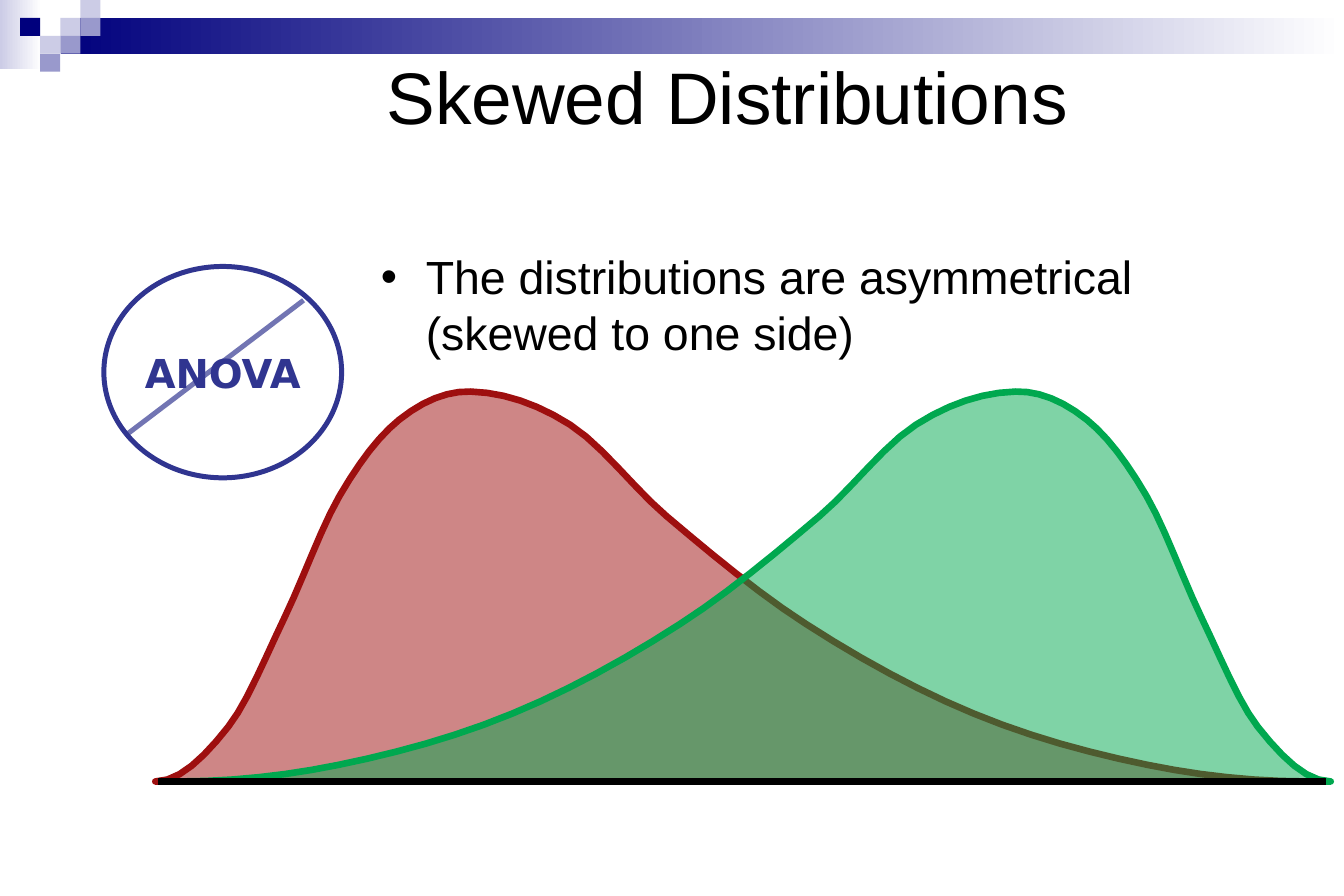
from dataclasses import dataclass

from pptx import Presentation
from pptx.dml.color import RGBColor
from pptx.enum.shapes import MSO_CONNECTOR as Connector, MSO_SHAPE as Shape
from pptx.enum.text import MSO_ANCHOR as Anchor, PP_ALIGN as Align
from pptx.oxml.ns import qn
from pptx.util import Pt
from lxml.etree import SubElement


@dataclass(frozen=True)
class Theme:
    navy: str = "00007D"
    lilac: str = "CCCCE6"
    mauve: str = "9999CC"
    white: str = "FFFFFF"
    black: str = "000000"
    red: str = "9E0F0F"
    green: str = "00A84F"
    badge: str = "303590"
    font: str = "Arial"
    badge_font: str = "DejaVu Sans"
    title_size: int = 44
    body_size: int = 28
    badge_size: int = 24


THEME = Theme()

MOSAIC = ["....L", ".N.LM", "..LM", "..M"]
MOSAIC_COLORS = {"N": THEME.navy, "L": THEME.lilac, "M": THEME.mauve}

SKEW_HEIGHTS = {
    0: 0, 44: 33, 78: 99, 111: 172, 147: 218, 190: 235,
    250: 215, 308: 160, 392: 95, 493: 41, 598: 10, 694: 0,
}
STEPS_PER_KNOT = 6


def apply(target, values):
    for name, value in values.items():
        setattr(target, name, value)


def rgb(color):
    return RGBColor.from_string(color)


def fade(parent, percent):
    SubElement(parent.find(".//" + qn("a:srgbClr")), qn("a:alpha"), val=str(percent * 1000))


def paint(shape, color):
    shape.shadow.inherit = False
    shape.fill.solid()
    shape.fill.fore_color.rgb = rgb(color)


def stroke(shape, color, width):
    shape.line.color.rgb = rgb(color)
    shape.line.width = Pt(width)


def add_line(slide, start, end, color, width):
    line = slide.shapes.add_connector(Connector.STRAIGHT, *map(Pt, start + end))
    stroke(line, color, width)
    SubElement(line.element.spPr, qn("a:effectLst"))
    return line


def write(shape, text, frame_format, paragraph_format, font_format, color):
    frame = shape.text_frame
    paragraph = frame.paragraphs[0]
    run = paragraph.add_run()
    run.text = text
    apply(frame, frame_format)
    apply(paragraph, paragraph_format)
    apply(run.font, font_format)
    run.font.color.rgb = rgb(color)
    return paragraph._p.get_or_add_pPr()


def space_before(properties):
    SubElement(SubElement(properties, qn("a:spcBef")), qn("a:spcPct"), val="20000")


def smooth_curve(knots, steps):
    inner_slopes = [(y2 - y0) / (x2 - x0) for (x0, y0), (x2, y2) in zip(knots, knots[2:])]
    slopes = [0, *inner_slopes, 0]
    points = []
    for (x0, y0), (x1, y1), slope0, slope1 in zip(knots, knots[1:], slopes, slopes[1:]):
        span = x1 - x0
        for step in range(steps):
            t = step / steps
            ease = t * t * (3 - 2 * t)
            bend = t * (1 - t) * span * ((1 - t) * slope0 - t * slope1)
            points.append((x0 + t * span, y0 + ease * (y1 - y0) + bend))
    return points + [knots[-1]]


def add_header(slide, left, top, width):
    column, row = 12.1, 10.8
    bar_left = 36.7
    bands = [
        (left, top, 25.2, 41.8, THEME.lilac),
        (left + bar_left, top + row, width - bar_left, 2 * row, THEME.navy),
    ]
    for *box, color in bands:
        band = slide.shapes.add_shape(Shape.RECTANGLE, *map(Pt, box))
        band.shadow.inherit = False
        band.line.fill.background()
        band.fill.gradient()
        band.fill.gradient_angle = 0
        for stop, shade in zip(band.fill.gradient_stops, (color, THEME.white)):
            stop.color.rgb = rgb(shade)

    for down, pattern in enumerate(MOSAIC):
        for across, key in enumerate(pattern):
            if key in MOSAIC_COLORS:
                box = (left + across * column, top + down * row, column, row)
                tile = slide.shapes.add_shape(Shape.RECTANGLE, *map(Pt, box))
                paint(tile, MOSAIC_COLORS[key])
                tile.line.fill.background()


def add_distribution(slide, outline, color):
    start, *rest = [(Pt(x), Pt(y)) for x, y in outline]
    builder = slide.shapes.build_freeform(*start, scale=1.0)
    builder.add_line_segments(rest, close=True)
    distribution = builder.convert_to_shape()
    paint(distribution, color)
    fade(distribution.element.spPr.find(qn("a:solidFill")), 50)
    stroke(distribution, color, 4)
    SubElement(distribution.element.spPr.find(qn("a:ln")), qn("a:round"))


def add_distributions(slide, left, top, width, height):
    right, base = left + width, top + height
    profile = smooth_curve(list(SKEW_HEIGHTS.items()), STEPS_PER_KNOT)
    right_skewed = [(left + x, base - y) for x, y in profile]
    left_skewed = [(right - x, base - y) for x, y in profile]
    add_distribution(slide, right_skewed, THEME.red)
    add_distribution(slide, left_skewed, THEME.green)
    add_line(slide, (left + 1.4, base), (right - 2.8, base), THEME.black, 4.5)


def add_title(slide, left, top, width, height):
    title = slide.shapes.add_textbox(*map(Pt, (left, top, width, height)))
    write(title, "Skewed Distributions",
          {"word_wrap": True, "vertical_anchor": Anchor.MIDDLE},
          {"alignment": Align.CENTER},
          {"name": THEME.font, "size": Pt(THEME.title_size)}, THEME.black)


def add_statement(slide, left, top, width, height):
    statement = slide.shapes.add_textbox(*map(Pt, (left, top, width, height)))
    properties = write(
        statement, "The distributions are asymmetrical (skewed to one side)",
        {"word_wrap": True, "vertical_anchor": Anchor.TOP}, {},
        {"name": THEME.font, "size": Pt(THEME.body_size)}, THEME.black)
    indent = Pt(27)
    properties.set("marL", str(indent))
    properties.set("indent", str(-indent))
    space_before(properties)
    SubElement(properties, qn("a:buFont"), typeface=THEME.font)
    SubElement(properties, qn("a:buChar"), char="•")


def add_anova_badge(slide, left, top, width, height):
    ring = slide.shapes.add_shape(Shape.OVAL, *map(Pt, (left, top, width, height)))
    ring.shadow.inherit = False
    ring.fill.background()
    stroke(ring, THEME.badge, 3)
    properties = write(
        ring, "ANOVA", {"word_wrap": False, "vertical_anchor": Anchor.MIDDLE},
        {"alignment": Align.CENTER},
        {"name": THEME.badge_font, "size": Pt(THEME.badge_size), "bold": True}, THEME.badge)
    space_before(properties)
    upper_end = (left + 0.84 * width, top + 0.16 * height)
    lower_end = (left + 0.09 * width, top + 0.8 * height)
    slash = add_line(slide, upper_end, lower_end, THEME.badge, 3)
    fade(slash.element.spPr.find(qn("a:ln")), 67)


def main():
    deck = Presentation()
    apply(deck, {"slide_width": Pt(810), "slide_height": Pt(540)})
    slide = deck.slides.add_slide(deck.slide_layouts[6])
    add_header(slide, 0, 0, 810)
    add_distributions(slide, 93.6, 236, 708.4, 235)
    add_title(slide, 108, 12.2, 661, 90)
    add_statement(slide, 222.5, 146.2, 546.5, 75)
    add_anova_badge(slide, 62.6, 160.6, 143.3, 127.4)
    deck.save("out.pptx")


if __name__ == "__main__":
    main()
